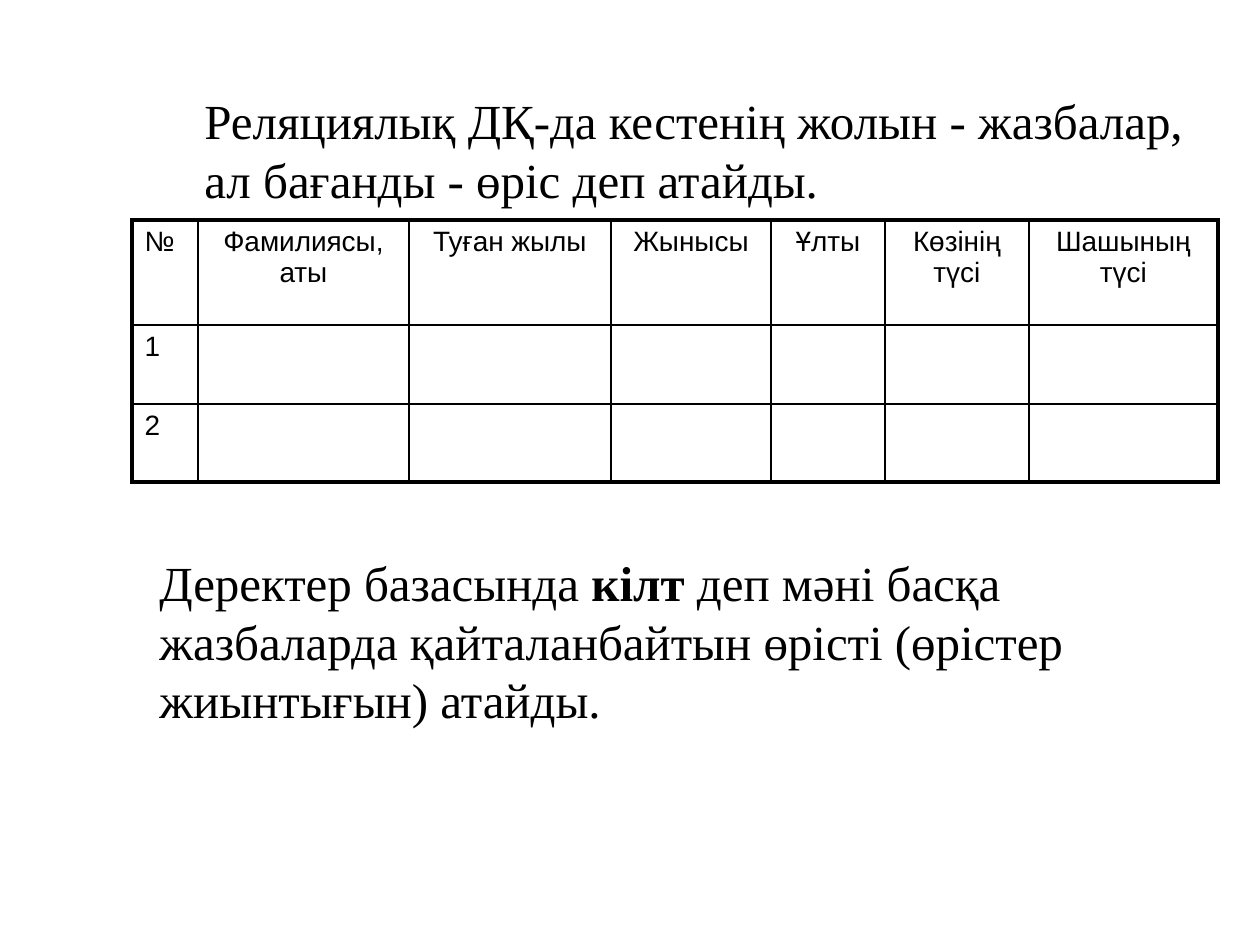
from pptx import Presentation
from pptx.dml.color import RGBColor
from pptx.enum.text import MSO_AUTO_SIZE as AutoSize, PP_ALIGN as Align
from pptx.oxml import parse_xml
from pptx.oxml.ns import nsdecls
from pptx.util import Emu, Pt

PX = 914400 / 126
COLORS = {"ink": "000000", "paper": "FFFFFF"}
BODY_FONT, TABLE_FONT = "Times New Roman", "Arial"
THIN, THICK = 1, 2.25


def px(length):
    return Emu(round(length * PX))


def write(paragraph, text, font=BODY_FONT, size=28, bold=False, align=None):
    """Add one formatted run to a paragraph."""
    run = paragraph.add_run()
    run.text = text
    run.font.name, run.font.size, run.font.bold = font, Pt(size), bold
    run.font.color.rgb = RGBColor.from_string(COLORS["ink"])
    if align is not None:
        paragraph.alignment = align


class SlideBuilder:
    def __init__(self, prs):
        self.slide = prs.slides.add_slide(prs.slide_layouts[6])
        background = self.slide.background.fill
        background.solid()
        background.fore_color.rgb = RGBColor.from_string(COLORS["paper"])

    def textbox(self, left, top, width, height, paragraphs, align=None):
        """Each paragraph is a list of (text, bold) pairs."""
        box = self.slide.shapes.add_textbox(*map(px, (left, top, width, height)))
        frame = box.text_frame
        frame.word_wrap = True
        frame.auto_size = AutoSize.SHAPE_TO_FIT_TEXT
        for i, runs in enumerate(paragraphs):
            paragraph = frame.add_paragraph() if i else frame.paragraphs[0]
            for text, bold in runs:
                write(paragraph, text, bold=bold, align=align)

    def border(self, cell, side, weight):
        cell._tc.get_or_add_tcPr().append(parse_xml(
            f'<a:{side} {nsdecls("a")} w="{Pt(weight)}"><a:solidFill>'
            f'<a:srgbClr val="{COLORS["ink"]}"/></a:solidFill></a:{side}>'))

    def table(self, left, top, widths, heights, rows):
        frame = self.slide.shapes.add_table(
            len(heights), len(widths),
            *map(px, (left, top, sum(widths), sum(heights))))
        table = frame.table
        table.first_row = table.horz_banding = False
        for column, width in zip(table.columns, widths):
            column.width = px(width)
        for row, height in zip(table.rows, heights):
            row.height = px(height)
        last_row, last_col = len(heights) - 1, len(widths) - 1
        for r, texts in enumerate(rows):
            for c, text in enumerate(texts):
                cell = table.cell(r, c)
                if text:
                    write(cell.text_frame.paragraphs[0], text, font=TABLE_FONT,
                          size=16, align=Align.CENTER if c else Align.LEFT)
                # Thick outer frame, thin inner grid
                outer = {"lnL": c == 0, "lnR": c == last_col,
                         "lnT": r == 0, "lnB": r == last_row}
                for side, is_outer in outer.items():
                    self.border(cell, side, THICK if is_outer else THIN)
                cell.fill.background()


def main():
    prs = Presentation()
    prs.slide_width, prs.slide_height = px(1260), px(945)
    page = SlideBuilder(prs)

    # Example table
    headings = ["№", "Фамилиясы, аты", "Туған жылы", "Жынысы", "Ұлты",
                "Көзінің түсі", "Шашының түсі"]
    records = [[number] + [""] * (len(headings) - 1) for number in ("1", "2")]
    page.table(132, 220, [66, 211, 202, 160, 114, 144, 189], [105, 79, 78],
               [headings] + records)

    # Rows and columns
    page.textbox(192, 84, 1027, 131, [
        [("Реляциялық ДҚ-да кестенің жолын - жазбалар, ", False)],
        [("ал бағанды - өріс деп атайды.", False)],
    ], align=Align.JUSTIFY)

    # Definition of a key
    page.textbox(147, 546, 1040, 190, [[
        ("Деректер базасында ", False),
        ("кілт", True),
        (" деп мәні басқа жазбаларда қайталанбайтын өрісті "
         "(өрістер жиынтығын) атайды.", False),
    ]])

    prs.save("out.pptx")


if __name__ == "__main__":
    main()
